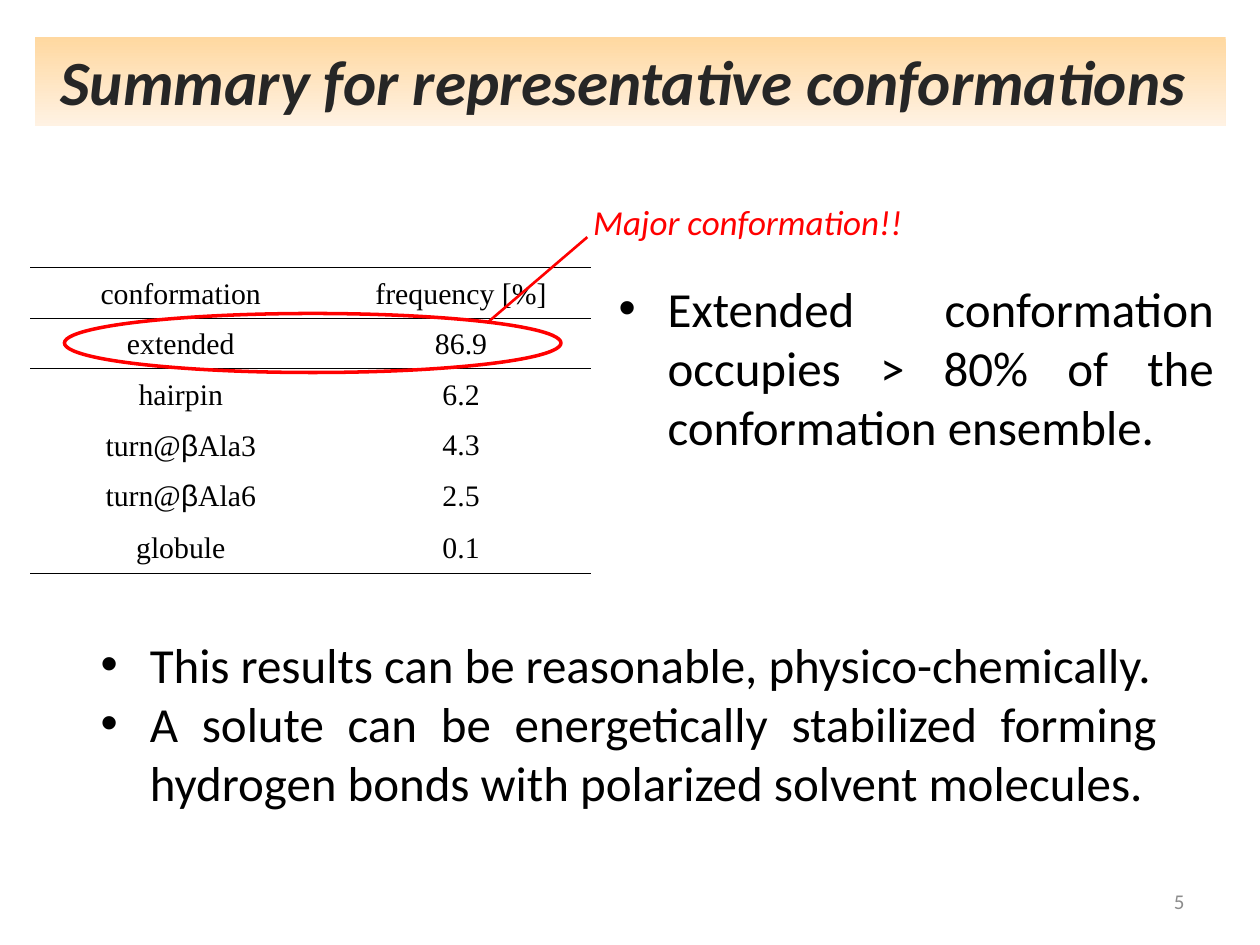
from dataclasses import dataclass

from lxml import etree
from pptx import Presentation
from pptx import util as u
from pptx.dml.color import RGBColor
from pptx.enum import shapes, text
from pptx.oxml.ns import qn

Cm, Pt = u.Cm, u.Pt
ALIGN, ANCHOR = text.PP_ALIGN, text.MSO_ANCHOR


@dataclass(frozen=True)
class Theme:
    ink: str = "000000"
    title_ink: str = "262626"
    muted: str = "8C8C8C"
    accent: str = "FF0000"
    band: tuple = ("FFD8A0", "FFF2E3")
    body_font: str = "Calibri"
    table_font: str = "Times New Roman"
    symbol_font: str = "Arial"
    title_size: int = 36
    body_size: int = 28
    label_size: int = 20
    table_size: int = 17
    number_size: int = 12


THEME = Theme()
FREQUENCIES = [
    ("conformation", "frequency [%]"),
    ("extended", "86.9"),
    ("hairpin", "6.2"),
    ("turn@βAla3", "4.3"),
    ("turn@βAla6", "2.5"),
    ("globule", "0.1"),
]


def rgb(value):
    return RGBColor.from_string(value)


def add_run(paragraph, words, size, color, font, bold=False, italic=False):
    run = paragraph.add_run()
    run.text = words
    run.font.name = font
    run.font.size = Pt(size)
    run.font.color.rgb = rgb(color)
    run.font.bold = bold
    run.font.italic = italic


def add_bullet(paragraph, hang=Cm(0.99)):
    props = paragraph._p.get_or_add_pPr()
    props.set("marL", str(hang))
    props.set("indent", str(-hang))
    etree.SubElement(props, qn("a:buFont"), typeface="Arial")
    etree.SubElement(props, qn("a:buChar"), char="•")


def write(frame, *lines, size=THEME.body_size, color=THEME.ink, font=THEME.body_font,
          align=ALIGN.LEFT, anchor=ANCHOR.TOP, wrap=True, grow=True,
          bullets=False, bold=False, italic=False):
    frame.word_wrap = wrap
    frame.vertical_anchor = anchor
    frame.auto_size = (text.MSO_AUTO_SIZE.SHAPE_TO_FIT_TEXT if grow
                       else text.MSO_AUTO_SIZE.NONE)
    for index, line in enumerate(lines):
        paragraph = frame.add_paragraph() if index else frame.paragraphs[0]
        paragraph.alignment = align
        if bullets:
            add_bullet(paragraph)
        add_run(paragraph, line, size, color, font, bold, italic)


def add_text(slide, box, *lines, **style):
    write(slide.shapes.add_textbox(*map(Cm, box)).text_frame, *lines, **style)


def add_title(slide, box, words):
    band = slide.shapes.add_shape(shapes.MSO_SHAPE.RECTANGLE, *map(Cm, box))
    band.shadow.inherit = False
    band.line.fill.background()
    band.fill.gradient()
    band.fill.gradient_angle = 270
    for stop, color in zip(band.fill.gradient_stops, THEME.band):
        stop.color.rgb = rgb(color)
    write(band.text_frame, words, size=THEME.title_size, color=THEME.title_ink,
          align=ALIGN.CENTER, bold=True, italic=True)


def add_border(cell, side, width):
    border = etree.SubElement(cell._tc.get_or_add_tcPr(), qn(f"a:{side}"), w=str(Pt(width)))
    fill = etree.SubElement(border, qn("a:solidFill"))
    etree.SubElement(fill, qn("a:srgbClr"), val=THEME.ink)


def fill_cell(cell, words):
    cell.vertical_anchor = ANCHOR.MIDDLE
    cell.margin_left = cell.margin_right = cell.margin_top = Cm(0.05)
    cell.margin_bottom = 0
    paragraph = cell.text_frame.paragraphs[0]
    paragraph.alignment = ALIGN.CENTER
    for part in words.partition("β"):
        if part:
            font = THEME.symbol_font if part == "β" else THEME.table_font
            add_run(paragraph, part, THEME.table_size, THEME.ink, font)


def add_frequency_table(slide, left, top, widths, heights):
    frame = slide.shapes.add_table(len(heights), len(widths), Cm(left), Cm(top),
                                   Cm(sum(widths)), Cm(sum(heights)))
    table = frame.table
    table.first_row = table.horz_banding = False
    style = table._tbl.tblPr.find(qn("a:tableStyleId"))
    style.text = "{2D5ABB26-0587-4C30-8999-92F81FD0307C}"
    for column, width in zip(table.columns, widths):
        column.width = Cm(width)
    for row, height in zip(table.rows, heights):
        row.height = Cm(height)

    rules = {0: 1, 1: 0.5, len(heights) - 1: 1}
    for r, row in enumerate(table.rows):
        for c, cell in enumerate(row.cells):
            if r - 1 in rules:
                add_border(cell, "lnT", rules[r - 1])
            if r in rules:
                add_border(cell, "lnB", rules[r])
            cell.fill.background()
            if r:
                fill_cell(cell, FREQUENCIES[r - 1][c])


def add_highlight(slide, box):
    ring = slide.shapes.add_shape(shapes.MSO_SHAPE.OVAL, *map(Cm, box))
    ring.shadow.inherit = False
    ring.fill.background()
    ring.line.color.rgb = rgb(THEME.accent)
    ring.line.width = Pt(2)


def add_leader(slide, start, end):
    leader = slide.shapes.add_connector(shapes.MSO_CONNECTOR.STRAIGHT,
                                        *map(Cm, start + end))
    leader.line.color.rgb = rgb(THEME.accent)
    leader.line.width = Pt(1.5)
    etree.SubElement(leader._element.spPr, qn("a:effectLst"))


def main():
    deck = Presentation()
    deck.slide_width, deck.slide_height = Cm(25.4), Cm(19.05)
    slide = deck.slides.add_slide(deck.slide_layouts[6])

    add_title(slide, (0.71, 0.74, 24, 1.8), "Summary for representative conformations ")
    add_text(slide, (12.22, 5.49, 12.5, 3.84),
             "Extended conformation occupies > 80% of the conformation ensemble.",
             align=ALIGN.JUSTIFY, bullets=True)
    add_frequency_table(slide, 0.61, 4.32, (6.07, 5.23), (1.07, *[1.02] * 5, 1.07))
    add_text(slide, (18.21, 17.65, 5.92, 1.02), "5", size=THEME.number_size,
             color=THEME.muted, align=ALIGN.RIGHT, anchor=ANCHOR.MIDDLE, grow=False)
    add_text(slide, (1.78, 12.67, 21.79, 3.84),
             "This results can be reasonable, physico-chemically.",
             "A solute can be energetically stabilized forming hydrogen bonds "
             "with polarized solvent molecules.",
             align=ALIGN.JUSTIFY, bullets=True)
    add_highlight(slide, (1.3, 6.32, 10.01, 1.19))
    add_leader(slide, (11.84, 4.78), (9.83, 6.5))
    add_text(slide, (11.71, 3.91, 6.81, 1.12), "Major conformation!!",
             size=THEME.label_size, color=THEME.accent, wrap=False, italic=True)

    deck.save("out.pptx")


if __name__ == "__main__":
    main()
